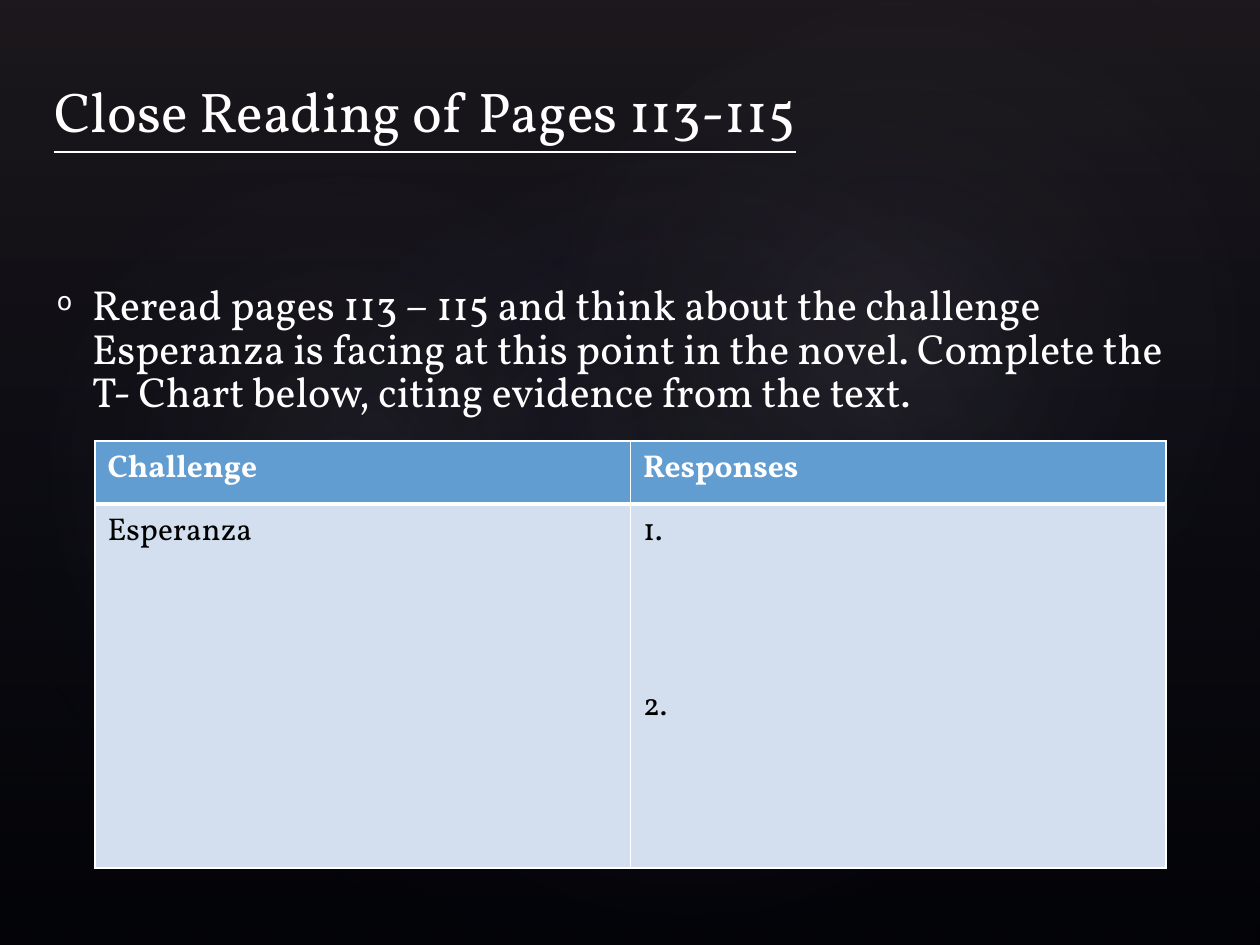
from dataclasses import dataclass

from lxml import etree
from pptx import Presentation
from pptx import util as u
from pptx.dml.color import RGBColor
from pptx.enum import shapes, text
from pptx.oxml import ns

EMU_PER_PX = 914400 // 126


@dataclass(frozen=True)
class Theme:
    font: str = "Vollkorn"
    backdrop: str = "000000"
    shade_top: str = "504652"
    shade_end: str = "242852"
    glow: str = "C4BCC6"
    light: str = "FFFFFF"
    dark: str = "000000"
    header_fill: str = "629DD1"
    body_fill: str = "D3DFEE"
    title_size: int = 32
    body_size: int = 24
    table_size: int = 18


@dataclass(frozen=True)
class Box:
    left: int
    top: int
    width: int
    height: int


@dataclass(frozen=True)
class Stop:
    position: int
    color: str
    alpha: int


@dataclass(frozen=True)
class Glow:
    box: Box
    rotation: float
    alpha: int


THEME = Theme()
PAGE = Box(0, 0, 1260, 945)
GLOWS = [
    Glow(Box(189, 144, 998, 786), 328.7, 7),
    Glow(Box(-38, 161, 764, 617), 294.3, 8),
    Glow(Box(451, 16, 893, 655), 328.7, 8),
]
TABLE_BOX = Box(95, 441, 1071, 427)
HEADER_HEIGHT = 63
TABLE_ROWS = [["Challenge", "Responses"], ["Esperanza", "1.\n2."]]
ANSWER_GAP = 75  # points, room for three written lines


def px(length: int) -> int:
    return length * EMU_PER_PX


def place(box: Box) -> tuple[int, ...]:
    return px(box.left), px(box.top), px(box.width), px(box.height)


def add_element(parent, tag: str, **attributes):
    element = etree.SubElement(parent, ns.qn(tag))
    for name, value in attributes.items():
        element.set(name, str(value))
    return element


def add_gradient_shape(slide, kind, box: Box, stops: list[Stop], radial: bool):
    shape = slide.shapes.add_shape(kind, *place(box))
    shape.shadow.inherit = False
    shape.line.fill.background()
    properties = shape.fill._xPr
    gradient = add_element(properties, "a:gradFill", rotWithShape=1)
    stop_list = add_element(gradient, "a:gsLst")
    for stop in stops:
        mark = add_element(stop_list, "a:gs", pos=stop.position * 1000)
        color = add_element(mark, "a:srgbClr", val=stop.color)
        add_element(color, "a:alpha", val=stop.alpha * 1000)
    if radial:
        circle = add_element(gradient, "a:path", path="circle")
        add_element(circle, "a:fillToRect", l=50000, t=50000, r=50000, b=50000)
    else:
        add_element(gradient, "a:lin", ang=90 * 60000, scaled=0)
    properties.insert(2, gradient)  # fill follows the geometry
    return shape


def format_runs(paragraph, size: int, color: str, bold: bool = False, underline: bool = False) -> None:
    for run in paragraph.runs:
        run.font.name = THEME.font
        run.font.size = u.Pt(size)
        run.font.color.rgb = RGBColor.from_string(color)
        run.font.bold = bold
        run.font.underline = underline


def add_text(slide, box: Box, wording: str, size: int, anchor, underline: bool = False):
    frame = slide.shapes.add_textbox(*place(box)).text_frame
    frame.word_wrap = True
    frame.vertical_anchor = anchor
    frame.text = wording
    format_runs(frame.paragraphs[0], size, THEME.light, underline=underline)
    return frame.paragraphs[0]


def add_bullet(paragraph) -> None:
    properties = paragraph._p.get_or_add_pPr()
    properties.set("marL", str(u.Inches(0.3)))
    properties.set("indent", str(u.Inches(-0.28)))
    add_element(properties, "a:buSzPct", val=60000)
    add_element(properties, "a:buChar", char="o")


def set_borders(cell, bottom_width: int) -> None:
    properties = cell._tc.get_or_add_tcPr()
    widths = {"a:lnL": 1, "a:lnR": 1, "a:lnT": 1, "a:lnB": bottom_width}
    for index, (tag, width) in enumerate(widths.items()):
        line = add_element(properties, tag, w=u.Pt(width))
        add_element(add_element(line, "a:solidFill"), "a:srgbClr", val=THEME.light)
        properties.insert(index, line)


def add_chart_table(slide) -> None:
    table = slide.shapes.add_table(2, 2, *place(TABLE_BOX)).table
    table.rows[0].height = px(HEADER_HEIGHT)
    table.rows[1].height = px(TABLE_BOX.height - HEADER_HEIGHT)
    for row_index, row in enumerate(TABLE_ROWS):
        header = row_index == 0
        for column_index, wording in enumerate(row):
            cell = table.cell(row_index, column_index)
            cell.fill.solid()
            cell.fill.fore_color.rgb = RGBColor.from_string(
                THEME.header_fill if header else THEME.body_fill)
            set_borders(cell, 3 if header else 1)
            cell.text_frame.text = wording
            for index, paragraph in enumerate(cell.text_frame.paragraphs):
                format_runs(paragraph, THEME.table_size,
                            THEME.light if header else THEME.dark, bold=header)
                if index:
                    paragraph.space_before = u.Pt(ANSWER_GAP)


def main() -> None:
    presentation = Presentation()
    presentation.slide_width, presentation.slide_height = px(PAGE.width), px(PAGE.height)
    slide = presentation.slides.add_slide(presentation.slide_layouts[6])

    # Dark background with soft glows
    slide.background.fill.solid()
    slide.background.fill.fore_color.rgb = RGBColor.from_string(THEME.backdrop)
    add_gradient_shape(slide, shapes.MSO_SHAPE.RECTANGLE, PAGE,
                       [Stop(0, THEME.shade_top, 36), Stop(100, THEME.shade_end, 10)], radial=False)
    for glow in GLOWS:
        shape = add_gradient_shape(slide, shapes.MSO_SHAPE.OVAL, glow.box,
                                   [Stop(0, THEME.glow, glow.alpha), Stop(58, THEME.shade_end, 0)],
                                   radial=True)
        shape.rotation = glow.rotation

    # Instruction and title
    instruction = add_text(
        slide, Box(42, 280, 1166, 162),
        "Reread pages 113 – 115 and think about the challenge Esperanza is facing at this point "
        "in the novel. Complete the T- Chart below, citing evidence from the text.",
        THEME.body_size, text.MSO_ANCHOR.TOP)
    instruction.line_spacing = 0.86
    add_bullet(instruction)
    add_text(slide, Box(42, 56, 1155, 94), "Close Reading of Pages 113-115",
             THEME.title_size, text.MSO_ANCHOR.BOTTOM, underline=True)

    # T-chart
    add_chart_table(slide)
    presentation.save("out.pptx")


if __name__ == "__main__":
    main()
